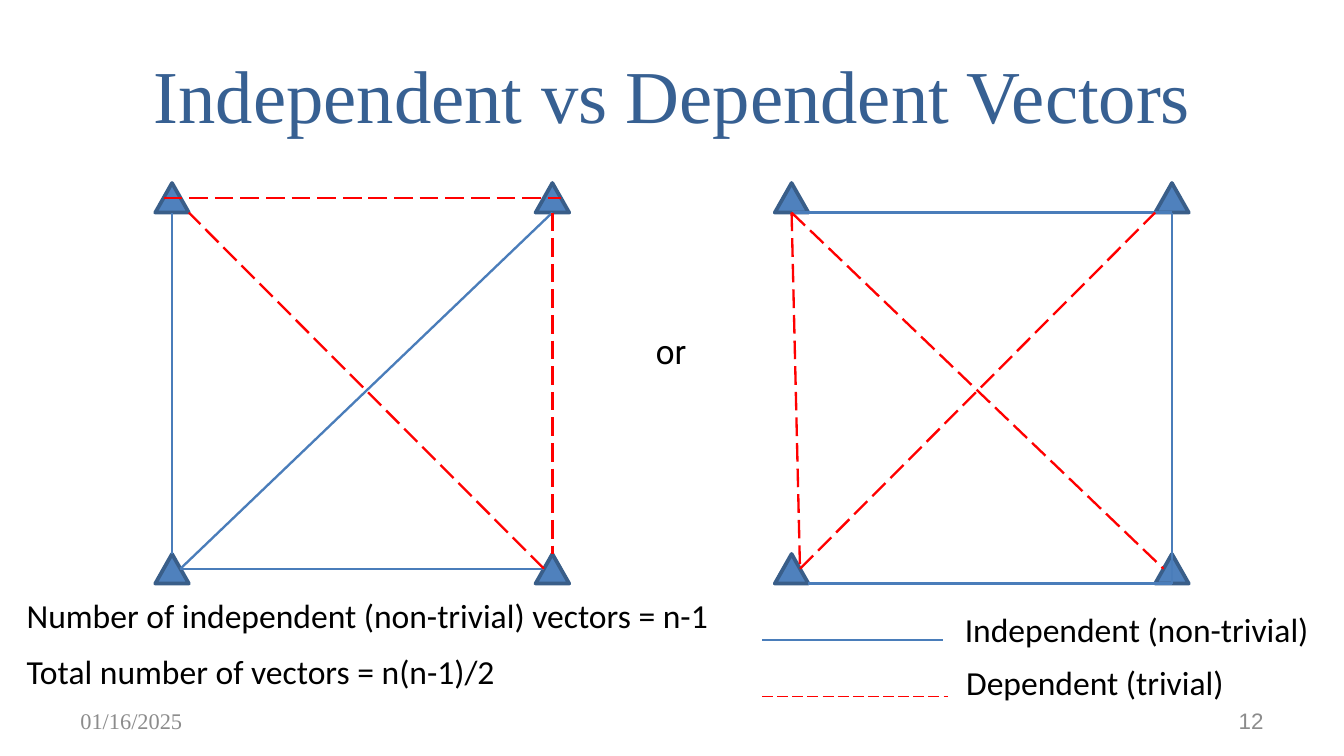
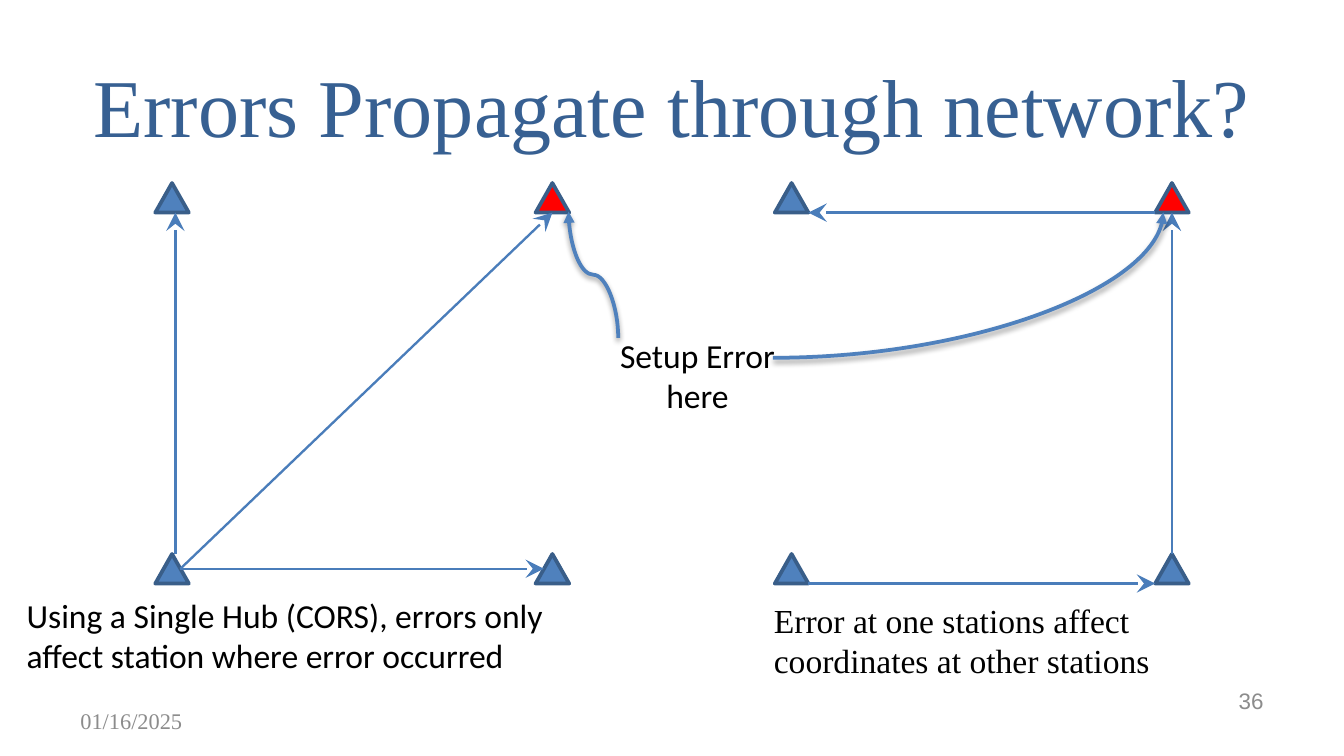
from dataclasses import dataclass

from lxml.etree import SubElement
from pptx import Presentation
from pptx.dml.color import RGBColor
from pptx.enum.dml import MSO_LINE as Dash
from pptx.enum.shapes import MSO_CONNECTOR as Link, MSO_SHAPE as Preset
from pptx.enum.text import MSO_ANCHOR as Anchor, PP_ALIGN as Align
from pptx.oxml.ns import qn
from pptx.util import Inches, Pt


@dataclass(frozen=True)
class Theme:
    title: str = "376092"
    footer: str = "8C8C8C"
    text: str = "000000"
    station: str = "4F81BD"
    outline: str = "395E89"
    independent: str = "4A7DBA"
    alert: str = "FF0000"
    serif: str = "Times New Roman"
    sans: str = "Calibri"
    number_font: str = "Arial"
    label_font: str = "Roboto"
    title_size: int = 40
    large_title_size: int = 44
    body_size: int = 18
    footer_size: int = 12
    thin: float = 0.75
    medium: float = 1.25
    thick: float = 2


@dataclass(frozen=True)
class Box:
    left: float
    top: float
    width: float
    height: float

    def point(self, across, down):
        return self.left + across * self.width, self.top + down * self.height

    def inner(self, column, row, columns, rows):
        return Box(self.left + column, self.top + row, columns, rows)

    def lengths(self):
        return [cells(value) for value in (self.left, self.top, self.width, self.height)]


THEME = Theme()
GRID = 10
SLIDE = Box(0, 0, 100, 56.25)
LEFT_NETWORK = Box(11.55, 13.62, 30.8, 29.8)
RIGHT_NETWORK = Box(57.65, 13.62, 30.8, 29.8)
STATION = (2.5, 2.2)
CORNERS = {"NW": (0, 0), "NE": (1, 0), "SW": (0, 1), "SE": (1, 1)}
ANCHORS = {
    "apex": (0.5, 0), "apex side": (0.6, 0),
    "left": (0.25, 0.5), "right": (0.75, 0.5),
    "base": (0.5, 1), "base side": (0.6, 1),
    "base left": (0, 1), "base right": (1, 1),
}
ARROWS = {"stealth": "lg", "triangle": "med"}


def cells(value):
    return Inches(value / GRID)


def apply_format(target, values):
    for name, value in values.items():
        setattr(target, name, value)


def add_text(slide, box, text, size=THEME.body_size, font=THEME.sans,
             color=THEME.text, align=Align.LEFT, anchor=Anchor.TOP, inset=0.05):
    frame = slide.shapes.add_textbox(*box.lengths()).text_frame
    apply_format(frame, {
        "word_wrap": True, "vertical_anchor": anchor,
        "margin_left": Inches(0.1), "margin_right": Inches(0.1),
        "margin_top": Inches(inset), "margin_bottom": Inches(inset),
    })
    paragraph = frame.paragraphs[0]
    paragraph.alignment = align
    run = paragraph.add_run()
    run.text = text
    apply_format(run.font, {"size": Pt(size), "name": font})
    run.font.color.rgb = RGBColor.from_string(color)


def add_line(slide, start, end, color=THEME.independent, width=THEME.medium,
             dash=None, arrow=None, kind=Link.STRAIGHT):
    connector = slide.shapes.add_connector(kind, *map(cells, start + end))
    connector.line.color.rgb = RGBColor.from_string(color)
    apply_format(connector.line, {"width": Pt(width), "dash_style": dash})
    properties = connector._element.spPr
    if arrow:
        SubElement(properties.find(qn("a:ln")), qn("a:tailEnd"),
                   type=arrow, w=ARROWS[arrow], len=ARROWS[arrow])
    SubElement(properties, qn("a:effectLst"))
    return connector


def add_curve(slide, start, end, preset, turn=0):
    connector = add_line(slide, start, end, THEME.station, THEME.thick,
                         arrow="triangle", kind=Link.CURVE)
    properties = connector._element.spPr
    properties.find(qn("a:prstGeom")).set("prst", preset)
    if turn:
        properties.find(qn("a:xfrm")).set("rot", str(turn * 60000))
    shadow = SubElement(
        properties.find(qn("a:effectLst")), qn("a:outerShdw"), blurRad=str(Pt(3.1)),
        dist=str(Pt(1.6)), dir="5400000", rotWithShape="0")
    color = SubElement(shadow, qn("a:srgbClr"), val=THEME.text)
    SubElement(color, qn("a:alpha"), val="38000")


def station_box(box, corner):
    across, down = CORNERS[corner]
    width, height = STATION
    return box.inner(across * (box.width - width), down * (box.height - height), width, height)


def anchor_point(box, place):
    corner, anchor = place.split(" ", 1)
    return station_box(box, corner).point(*ANCHORS[anchor])


def add_stations(slide, box, alert=None):
    for corner in CORNERS:
        shape = slide.shapes.add_shape(Preset.ISOSCELES_TRIANGLE,
                                       *station_box(box, corner).lengths())
        shape.shadow.inherit = False
        shape.fill.solid()
        fill = THEME.alert if corner == alert else THEME.station
        shape.fill.fore_color.rgb = RGBColor.from_string(fill)
        shape.line.color.rgb = RGBColor.from_string(THEME.outline)
        shape.line.width = Pt(THEME.thick)


def add_vectors(slide, box, vectors, **line_format):
    for start, end in vectors:
        add_line(slide, anchor_point(box, start), anchor_point(box, end), **line_format)


def add_network(slide, box, independent, dependent=(), arrow=None, alert=None):
    add_stations(slide, box, alert)
    add_vectors(slide, box, independent, arrow=arrow)
    add_vectors(slide, box, dependent, color=THEME.alert, dash=Dash.LONG_DASH)


def add_frame(slide, title, title_box, title_size, number, number_row):
    add_text(slide, title_box, title, title_size, THEME.serif, THEME.title,
             Align.CENTER, Anchor.MIDDLE)
    footer = {"size": THEME.footer_size, "color": THEME.footer, "anchor": Anchor.MIDDLE}
    add_text(slide, SLIDE.inner(5, 52.13, 23.3, 3), "01/16/2025", font=THEME.serif, **footer)
    add_text(slide, SLIDE.inner(71.7, number_row, 23.3, 3), number,
             font=THEME.number_font, align=Align.RIGHT, **footer)


def add_formulas(slide, box):
    formulas = ("Number of independent (non-trivial) vectors = n-1",
                "Total number of vectors = n(n-1)/2")
    for index, formula in enumerate(formulas):
        add_text(slide, box.inner(0, index * 4.2, box.width, 4), formula)


def add_legend(slide, box):
    entries = (("Independent (non-trivial)", THEME.independent, None, 13.5, 14.1),
               ("Dependent (trivial)", THEME.alert, Dash.LONG_DASH, 13.8, 14.2))
    for index, (label, color, dash, length, column) in enumerate(entries):
        row = box.top + 2.8 + index * 4.2
        add_line(slide, (box.left, row), (box.left + length, row), color, THEME.thin, dash)
        add_text(slide, box.inner(column, index * 3.9, box.width - column, 4), label)


def add_setup_error(slide, box):
    add_text(slide, box, "Setup Error here", align=Align.CENTER)
    add_curve(slide, (39.45, 22.3), (48.85, 18.6), "curvedConnector3", 270)
    add_curve(slide, (box.left + 12.4, box.top + 2.2),
              (RIGHT_NETWORK.left + 28.9, RIGHT_NETWORK.top + STATION[1]), "curvedConnector2")


def build_vectors_slide(slide):
    add_frame(slide, "Independent vs Dependent Vectors", SLIDE.inner(5, 2.3, 90, 9.4),
              THEME.title_size, "12", 52.13)
    add_network(
        slide, LEFT_NETWORK,
        (("NW base", "SW apex"), ("SW right", "NE base"), ("SW right", "SE left")),
        (("NW left", "NE right"), ("NE base", "SE apex"), ("SE left", "NW base right")))
    add_network(
        slide, RIGHT_NETWORK,
        (("NW base", "NE base"), ("NE base", "SE base"), ("SE base", "SW base right")),
        (("SW right", "NE base left"), ("NW base", "SE left"), ("NW base", "SW right")))
    add_formulas(slide, SLIDE.inner(1, 43.75, 60, 8.2))
    add_legend(slide, SLIDE.inner(56.7, 44.83, 43.3, 7.9))
    add_text(slide, SLIDE.inner(47.8, 23.63, 6.4, 4.6), "or", font=THEME.label_font, inset=0.1)


def build_errors_slide(slide):
    add_frame(slide, "Errors Propagate through network?", SLIDE.inner(5, 5.65, 90, 4.3),
              THEME.large_title_size, "36", 50.6)
    add_network(
        slide, LEFT_NETWORK,
        (("SW apex side", "NW base side"), ("SW right", "NE base"), ("SW right", "SE left")),
        arrow="stealth", alert="NE")
    add_network(
        slide, RIGHT_NETWORK,
        (("NE base left", "NW base right"), ("SE apex", "NE base"),
         ("SW base right", "SE base left")),
        arrow="stealth", alert="NE")
    add_text(slide, SLIDE.inner(1, 43.75, 41.4, 7.1),
             "Using a Single Hub (CORS), errors only affect station where error occurred")
    add_setup_error(slide, SLIDE.inner(45.1, 24.43, 13.6, 7.1))
    add_text(slide, SLIDE.inner(56.6, 44.15, 34, 7.1),
             "Error at one stations affect coordinates at other stations", font=THEME.serif)


def main():
    presentation = Presentation()
    apply_format(presentation, {"slide_width": cells(SLIDE.width),
                                "slide_height": cells(SLIDE.height)})
    for build in (build_vectors_slide, build_errors_slide):
        build(presentation.slides.add_slide(presentation.slide_layouts[6]))
    presentation.save("out.pptx")


if __name__ == "__main__":
    main()
